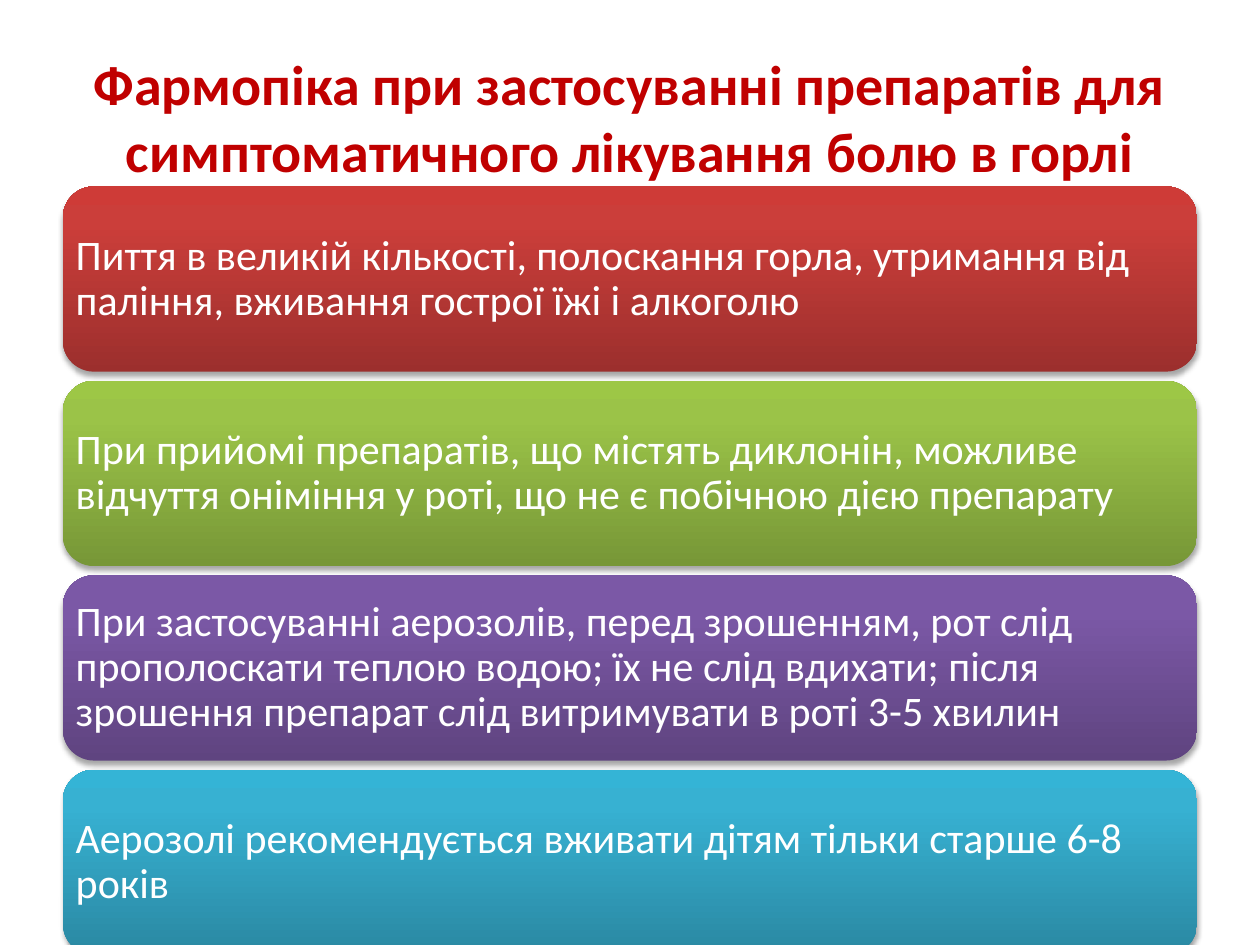
from lxml import etree
from pptx import Presentation
from pptx.dml.color import RGBColor
from pptx.enum import shapes, text
from pptx.oxml import ns
from pptx.util import Inches, Pt

HUES = {
    "title": "C00000",
    "text": "FFFFFF",
    "shadow": "000000",
    # Gradient stops from the bottom up
    "red": ("9C2F2D", "CB3E3A", "CE3B37"),
    "green": ("779737", "9BC348", "9DC746"),
    "violet": ("5F4480", "7B58A6", "7C57A8"),
    "blue": ("2A88A2", "37B1D2", "34B4D6"),
}
STOPS = (0, 80, 100)

TITLE = "Фармопіка при застосуванні препаратів для симптоматичного лікування болю в горлі"
TIPS = [
    ("red", "Пиття в великій кількості, полоскання горла, утримання від паління, "
            "вживання гострої їжі і алкоголю"),
    ("green", "При прийомі препаратів, що містять диклонін, можливе відчуття "
              "оніміння у роті, що не є побічною дією препарату"),
    ("violet", "При застосуванні аерозолів, перед зрошенням, рот слід прополоскати "
               "теплою водою; їх не слід вдихати; після зрошення препарат слід "
               "витримувати в роті 3-5 хвилин"),
    ("blue", "Аерозолі рекомендується вживати дітям тільки старше 6-8 років"),
]

LEFT, WIDTH, HIGH = 0.5, 9, 1.47
FIRST, LAST = 1.48, 6.11


def add(parent, tag, **attrs):
    return etree.SubElement(parent, ns.qn(tag), {k: str(v) for k, v in attrs.items()})


def write(shape, words, size, hue, align, bold=False):
    frame = shape.text_frame
    frame.word_wrap = True
    frame.vertical_anchor = text.MSO_ANCHOR.MIDDLE
    para = frame.paragraphs[0]
    para.text = words
    para.alignment = align
    font = para.font
    font.name, font.size, font.bold = "Calibri", Pt(size), bold
    font.color.rgb = RGBColor.from_string(HUES[hue])
    return para


def shade(shape, hues):
    shape.fill.gradient()
    shape.fill.gradient_angle = 90
    stops = shape.element.spPr.find(".//" + ns.qn("a:gsLst"))
    for stop in list(stops):
        stops.remove(stop)
    for pos, hue in zip(STOPS, hues):
        add(add(stops, "a:gs", pos=pos * 1000), "a:srgbClr", val=hue)


def cast(shape):
    shape.shadow.inherit = False
    effects = shape.element.spPr.find(ns.qn("a:effectLst"))
    outer = add(effects, "a:outerShdw", blurRad=Pt(3.1), dist=Pt(1.8),
                dir=90 * 60000, rotWithShape=0)
    add(add(outer, "a:srgbClr", val=HUES["shadow"]), "a:alpha", val=35000)


def add_title(slide):
    box = slide.shapes.add_textbox(Inches(LEFT), Inches(0.3), Inches(WIDTH), Inches(1.25))
    write(box, TITLE, 32, "title", text.PP_ALIGN.CENTER, bold=True)


def add_tip(slide, top, hue, words):
    card = slide.shapes.add_shape(shapes.MSO_SHAPE.ROUNDED_RECTANGLE, Inches(LEFT),
                                  Inches(top), Inches(WIDTH), Inches(HIGH))
    shade(card, HUES[hue])
    card.line.fill.background()
    cast(card)
    # The rounded corners inset the text by a further 0.07 inch
    frame = card.text_frame
    frame.margin_left = frame.margin_right = Inches(0.03)
    frame.margin_top = frame.margin_bottom = Inches(0.03)
    para = write(card, words, 24, "text", text.PP_ALIGN.LEFT)
    para.line_spacing = 0.9


def main():
    deck = Presentation()
    deck.slide_width, deck.slide_height = Inches(10), Inches(7.5)
    slide = deck.slides.add_slide(deck.slide_layouts[6])

    # Heading
    add_title(slide)

    # Evenly stacked cards
    step = (LAST - FIRST) / (len(TIPS) - 1)
    for i, (hue, words) in enumerate(TIPS):
        add_tip(slide, FIRST + i * step, hue, words)

    deck.save("out.pptx")


if __name__ == "__main__":
    main()
